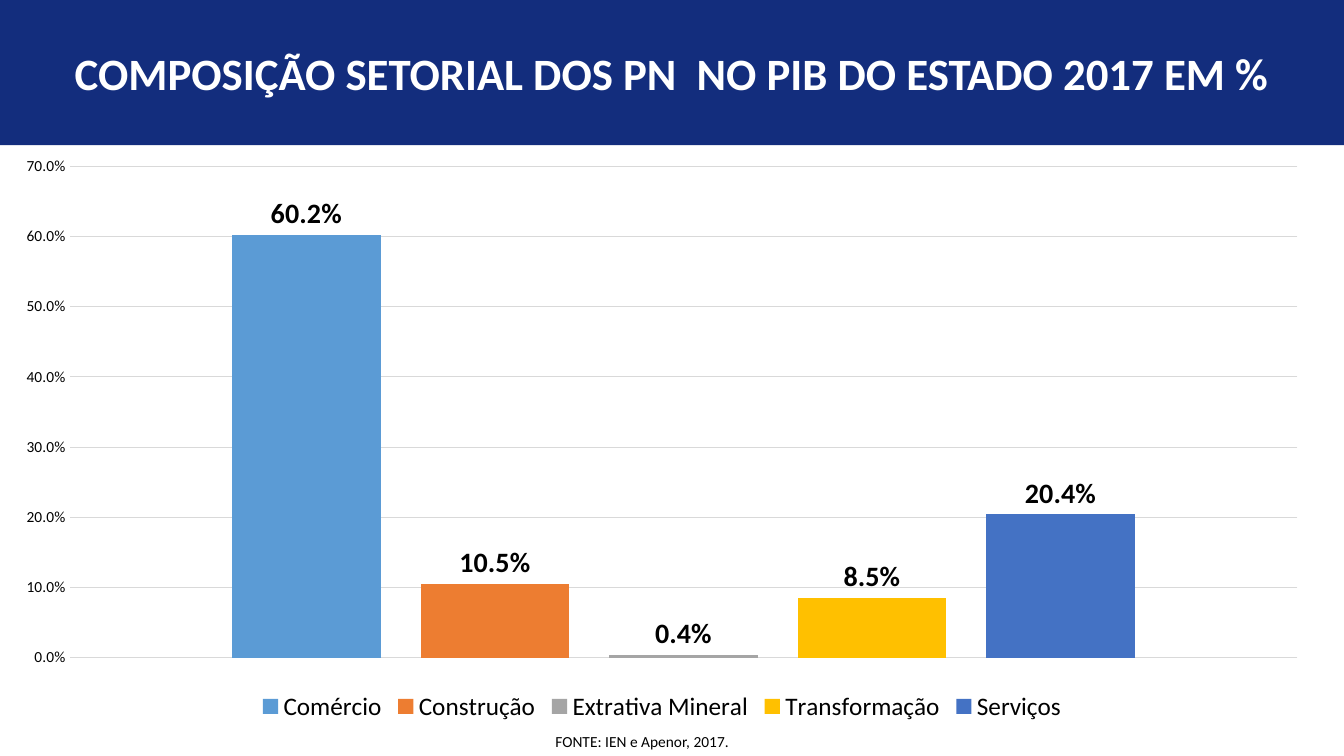
from pptx import Presentation
from pptx.chart.data import CategoryChartData
from pptx.dml.color import RGBColor
from pptx.enum.chart import XL_CHART_TYPE, XL_LABEL_POSITION, XL_LEGEND_POSITION, XL_TICK_MARK
from pptx.enum.shapes import MSO_SHAPE
from pptx.enum.text import MSO_ANCHOR, MSO_AUTO_SIZE, PP_ALIGN
from pptx.util import Inches, Pt

COLUMNS = XL_CHART_TYPE.COLUMN_CLUSTERED
OUTSIDE_END = XL_LABEL_POSITION.OUTSIDE_END
LEGEND_BOTTOM = XL_LEGEND_POSITION.BOTTOM
NO_TICKS = XL_TICK_MARK.NONE
RECTANGLE = MSO_SHAPE.RECTANGLE
MIDDLE = MSO_ANCHOR.MIDDLE
GROW = MSO_AUTO_SIZE.SHAPE_TO_FIT_TEXT
CENTER = PP_ALIGN.CENTER

SLIDE_W, SLIDE_H = Inches(13.33), Inches(7.5)
BANNER_H = Inches(1.44)
FONT = "Calibri"
PERCENT = "0.0%"
COLORS = {"banner": "132D7D", "white": "FFFFFF", "text": "000000", "grid": "D9D9D9"}
SECTORS = [
    ("Comércio", 0.602, "5B9BD5"),
    ("Construção", 0.105, "ED7D31"),
    ("Extrativa Mineral", 0.004, "A5A5A5"),
    ("Transformação", 0.085, "FFC000"),
    ("Serviços", 0.204, "4472C4"),
]


def rgb(name):
    return RGBColor.from_string(COLORS[name])


def style_font(font, size, color="text", bold=False):
    font.name, font.size, font.bold = FONT, Pt(size), bold
    font.color.rgb = rgb(color)


def add_banner(slide, box, title):
    banner = slide.shapes.add_shape(RECTANGLE, *box)
    banner.shadow.inherit = False
    banner.fill.solid()
    banner.fill.fore_color.rgb = rgb("banner")
    banner.line.fill.background()
    banner.text_frame.word_wrap = True
    banner.text_frame.vertical_anchor = MIDDLE
    paragraph = banner.text_frame.paragraphs[0]
    paragraph.alignment = CENTER
    run = paragraph.add_run()
    run.text = title
    style_font(run.font, 32, "white", bold=True)


def style_axes(chart):
    chart.category_axis.visible = False
    shares = chart.value_axis
    shares.minimum_scale, shares.maximum_scale, shares.major_unit = 0, 0.7, 0.1
    shares.major_tick_mark = shares.minor_tick_mark = NO_TICKS
    shares.format.line.fill.background()
    shares.major_gridlines.format.line.color.rgb = rgb("grid")
    shares.major_gridlines.format.line.width = Pt(0.75)
    shares.tick_labels.number_format = PERCENT
    shares.tick_labels.number_format_is_linked = False
    style_font(shares.tick_labels.font, 11)


def style_sector(series, color):
    series.format.fill.solid()
    series.format.fill.fore_color.rgb = RGBColor.from_string(color)
    series.invert_if_negative = False
    labels = series.data_labels
    labels.show_value = True
    labels.position = OUTSIDE_END
    labels.number_format = PERCENT
    labels.number_format_is_linked = False
    style_font(labels.font, 20, bold=True)


def add_sector_chart(slide, box):
    data = CategoryChartData(number_format=PERCENT)
    data.categories = ["1"]
    for name, share, _ in SECTORS:
        data.add_series(name, [share])
    chart = slide.shapes.add_chart(COLUMNS, *box, data).chart
    chart.has_title = False
    style_font(chart.font, 10)
    style_axes(chart)

    chart.has_legend = True
    chart.legend.position = LEGEND_BOTTOM
    chart.legend.include_in_layout = False
    style_font(chart.legend.font, 18)

    plot = chart.plots[0]
    plot.vary_by_categories = False
    plot.gap_width, plot.overlap = 219, -27
    for series, (_, _, color) in zip(plot.series, SECTORS):
        style_sector(series, color)


def add_source_note(slide, box, text):
    frame = slide.shapes.add_textbox(*box).text_frame
    frame.word_wrap = True
    frame.auto_size = GROW
    run = frame.paragraphs[0].add_run()
    run.text = text
    style_font(run.font, 11)


def main():
    deck = Presentation()
    deck.slide_width, deck.slide_height = SLIDE_W, SLIDE_H
    slide = deck.slides.add_slide(deck.slide_layouts[6])
    note_h = Inches(0.29)
    note_top = SLIDE_H - note_h
    add_banner(slide, (0, 0, SLIDE_W, BANNER_H),
               "COMPOSIÇÃO SETORIAL DOS PN  NO PIB DO ESTADO 2017 EM %")
    add_sector_chart(slide, (0, BANNER_H, Inches(13.13), note_top - BANNER_H))
    add_source_note(slide, (Inches(5.41), note_top, Inches(2.45), note_h),
                    "FONTE: IEN e Apenor, 2017.")
    deck.save("out.pptx")


if __name__ == "__main__":
    main()
